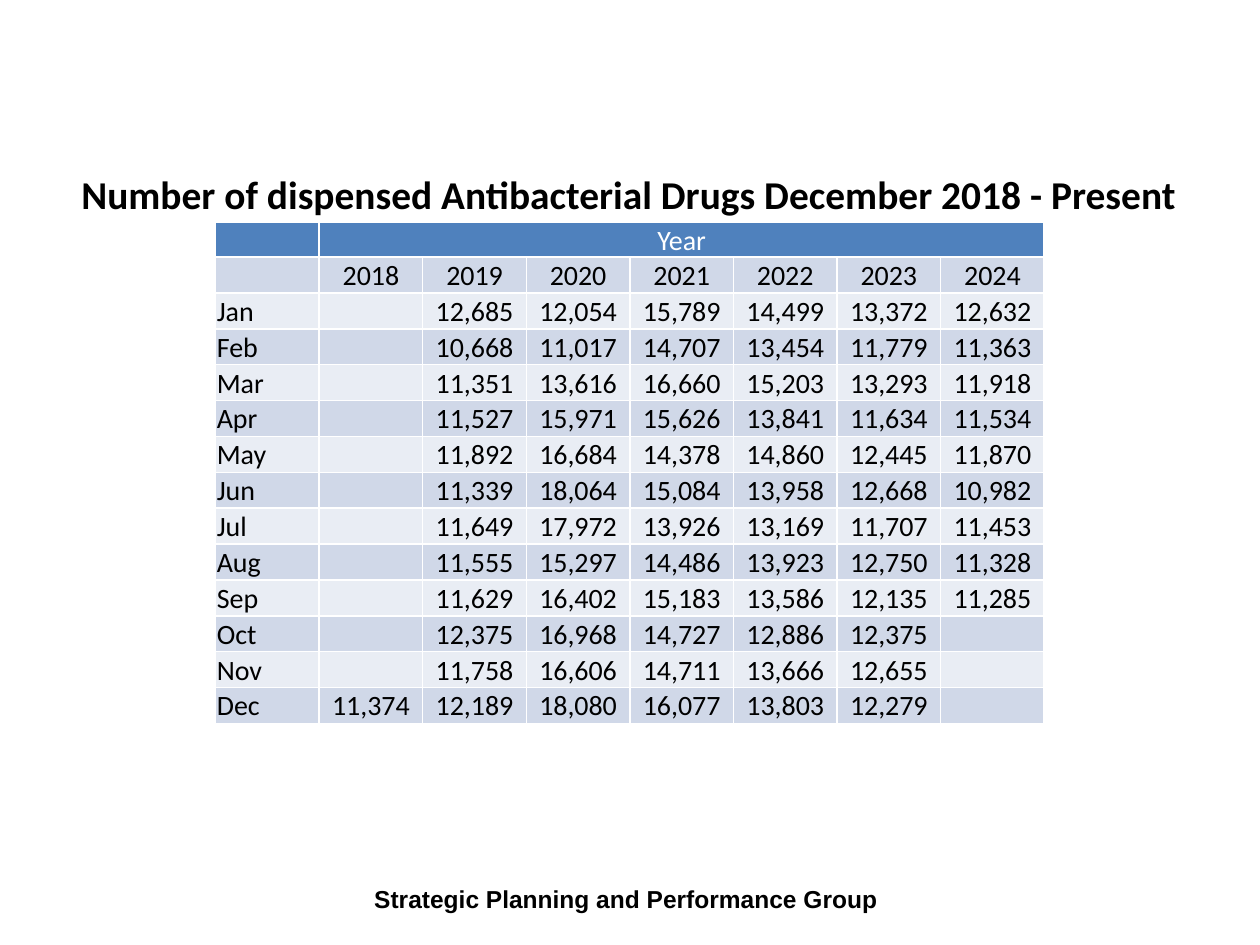
from dataclasses import dataclass

from lxml import etree
from pptx import Presentation
from pptx.dml.color import RGBColor
from pptx.enum.text import MSO_ANCHOR, PP_ALIGN
from pptx.oxml.ns import qn
from pptx.util import Pt

LEFT, CENTER = PP_ALIGN.LEFT, PP_ALIGN.CENTER
TOP, MIDDLE, BOTTOM = MSO_ANCHOR.TOP, MSO_ANCHOR.MIDDLE, MSO_ANCHOR.BOTTOM

BLACK, WHITE = "000000", "FFFFFF"
HEADER_FILL = "4F81BD"
BANDS = ("D0D8E8", "E9EDF4")
CELL_SIZE = 16
COLUMN_WIDTH, HEADER_HEIGHT, ROW_HEIGHT = 59.2, 19.5, 20.5

YEARS = ["2018", "2019", "2020", "2021", "2022", "2023", "2024"]
DISPENSED = [
    ["Jan", "", "12,685", "12,054", "15,789", "14,499", "13,372", "12,632"],
    ["Feb", "", "10,668", "11,017", "14,707", "13,454", "11,779", "11,363"],
    ["Mar", "", "11,351", "13,616", "16,660", "15,203", "13,293", "11,918"],
    ["Apr", "", "11,527", "15,971", "15,626", "13,841", "11,634", "11,534"],
    ["May", "", "11,892", "16,684", "14,378", "14,860", "12,445", "11,870"],
    ["Jun", "", "11,339", "18,064", "15,084", "13,958", "12,668", "10,982"],
    ["Jul", "", "11,649", "17,972", "13,926", "13,169", "11,707", "11,453"],
    ["Aug", "", "11,555", "15,297", "14,486", "13,923", "12,750", "11,328"],
    ["Sep", "", "11,629", "16,402", "15,183", "13,586", "12,135", "11,285"],
    ["Oct", "", "12,375", "16,968", "14,727", "12,886", "12,375", ""],
    ["Nov", "", "11,758", "16,606", "14,711", "13,666", "12,655", ""],
    ["Dec", "11,374", "12,189", "18,080", "16,077", "13,803", "12,279", ""],
]
ROWS = [["", "Year"] + [""] * 6, [""] + YEARS] + DISPENSED


@dataclass
class Caption:
    text: str
    left: float
    top: float
    width: float
    height: float
    font: str
    size: float
    align: PP_ALIGN
    anchor: MSO_ANCHOR
    margins: tuple[float, float]
    line_spacing: float = 1.0


def rgb(hex_color: str) -> RGBColor:
    return RGBColor.from_string(hex_color)


def style_font(paragraph, name: str, size: float, color: str, bold: bool) -> None:
    font = paragraph.font
    font.name, font.size, font.bold = name, Pt(size), bold
    font.color.rgb = rgb(color)


def add_caption(slide, caption: Caption) -> None:
    box = slide.shapes.add_textbox(
        Pt(caption.left), Pt(caption.top), Pt(caption.width), Pt(caption.height))
    frame = box.text_frame
    frame.word_wrap = True
    frame.vertical_anchor = caption.anchor
    side, end = caption.margins
    frame.margin_left = frame.margin_right = Pt(side)
    frame.margin_top = frame.margin_bottom = Pt(end)
    paragraph = frame.paragraphs[0]
    paragraph.text = caption.text
    paragraph.alignment = caption.align
    paragraph.line_spacing = caption.line_spacing
    style_font(paragraph, caption.font, caption.size, BLACK, True)


def add_borders(cell) -> None:
    """Draw thin white lines; they must come before the fill in tcPr."""
    properties = cell._tc.get_or_add_tcPr()
    for side in ("a:lnL", "a:lnR", "a:lnT", "a:lnB"):
        line = etree.SubElement(properties, qn(side), w=str(Pt(1)))
        fill = etree.SubElement(line, qn("a:solidFill"))
        etree.SubElement(fill, qn("a:srgbClr"), val=WHITE)


def fill_cell(cell, text: str, fill: str, color: str, align: PP_ALIGN) -> None:
    add_borders(cell)
    cell.fill.solid()
    cell.fill.fore_color.rgb = rgb(fill)
    cell.vertical_anchor = BOTTOM
    cell.margin_left = cell.margin_right = cell.margin_top = Pt(0.75)
    cell.margin_bottom = Pt(0)
    paragraph = cell.text_frame.paragraphs[0]
    paragraph.text = text
    paragraph.alignment = align
    style_font(paragraph, "Calibri", CELL_SIZE, color, False)
    if not text:  # keeps empty cells from stretching their row
        etree.SubElement(paragraph._p, qn("a:endParaRPr"), sz=str(CELL_SIZE * 100))


def add_dispensed_table(slide, left: float, top: float) -> None:
    column_count = len(ROWS[0])
    height = HEADER_HEIGHT + ROW_HEIGHT * (len(ROWS) - 1)
    table = slide.shapes.add_table(
        len(ROWS), column_count, Pt(left), Pt(top),
        Pt(COLUMN_WIDTH * column_count), Pt(height)).table
    for column in table.columns:
        column.width = Pt(COLUMN_WIDTH)
    for r, values in enumerate(ROWS):
        is_header = r == 0
        table.rows[r].height = Pt(HEADER_HEIGHT if is_header else ROW_HEIGHT)
        fill = HEADER_FILL if is_header else BANDS[(r - 1) % 2]
        color = WHITE if is_header else BLACK
        for c, value in enumerate(values):
            fill_cell(table.cell(r, c), value, fill, color, CENTER if c else LEFT)
    table.cell(0, 1).merge(table.cell(0, column_count - 1))


def main() -> None:
    presentation = Presentation()
    presentation.slide_width, presentation.slide_height = Pt(720), Pt(540)
    slide = presentation.slides.add_slide(presentation.slide_layouts[6])

    # Footer
    add_caption(slide, Caption(
        "Strategic Planning and Performance Group", 206.8, 501.8, 335, 28.8,
        "Arial", 14, LEFT, TOP, (7.2, 3.6)))

    # Monthly figures
    add_dispensed_table(slide, 123.2, 127)

    # Title
    add_caption(slide, Caption(
        "Number of dispensed Antibacterial Drugs December 2018 - Present",
        39.6, 91.4, 640, 42.5, "Calibri", 22.5, CENTER, MIDDLE, (5, 2.7), 0.9))

    presentation.save("out.pptx")


if __name__ == "__main__":
    main()
